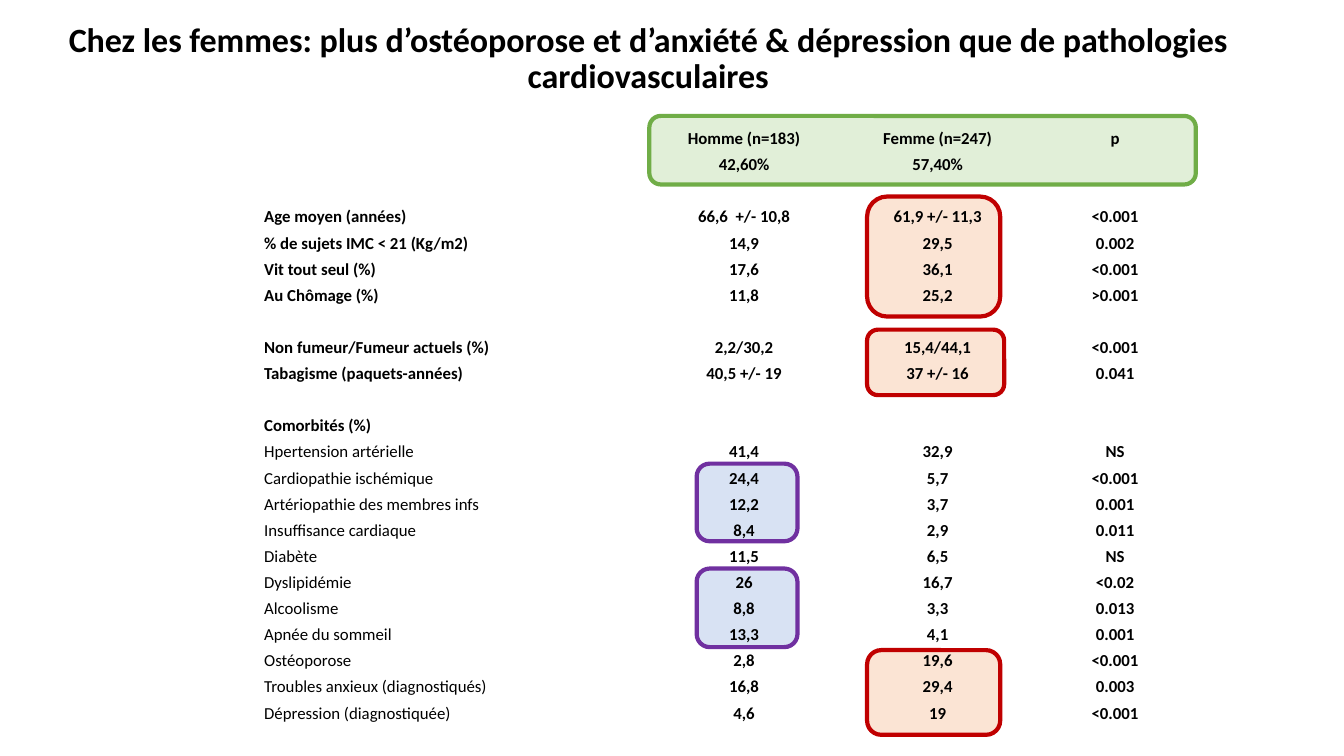
from pptx import Presentation
from pptx.dml.color import RGBColor
from pptx.enum.shapes import MSO_SHAPE
from pptx.enum.text import MSO_ANCHOR, MSO_AUTO_SIZE, PP_ALIGN
from pptx.util import Inches, Pt

TITLE = ("Chez les femmes: plus d’ostéoporose et d’anxiété & dépression "
         "que de pathologies cardiovasculaires")

GAP = ("", "", "", "")
HEAD = [
    ("", "Homme (n=183)", "Femme (n=247)", "p"),
    ("", "42,60%", "57,40%", ""),
    GAP,
    ("Age moyen (années)", "66,6  +/- 10,8", "61,9 +/- 11,3", "<0.001"),
    ("% de sujets IMC < 21 (Kg/m2)", "14,9", "29,5", "0.002"),
    ("Vit tout seul (%)", "17,6", "36,1", "<0.001"),
    ("Au Chômage (%)", "11,8", "25,2", ">0.001"),
    GAP,
    ("Non fumeur/Fumeur actuels (%)", "2,2/30,2", "15,4/44,1", "<0.001"),
    ("Tabagisme (paquets-années)", "40,5 +/- 19", "37 +/- 16", "0.041"),
    GAP,
    ("Comorbités (%)", "", "", ""),
]
ILLS = [
    ("Hpertension artérielle", "41,4", "32,9", "NS"),
    ("Cardiopathie ischémique", "24,4", "5,7", "<0.001"),
    ("Artériopathie des membres infs", "12,2", "3,7", "0.001"),
    ("Insuffisance cardiaque", "8,4", "2,9", "0.011"),
    ("Diabète", "11,5", "6,5", "NS"),
    ("Dyslipidémie", "26", "16,7", "<0.02"),
    ("Alcoolisme", "8,8", "3,3", "0.013"),
    ("Apnée du sommeil", "13,3", "4,1", "0.001"),
    ("Ostéoporose", "2,8", "19,6", "<0.001"),
    ("Troubles anxieux (diagnostiqués)", "16,8", "29,4", "0.003"),
    ("Dépression (diagnostiquée)", "4,6", "19", "<0.001"),
]
WIDTHS = (3.8, 1.92, 1.92, 1.6)
TABLE = (2.62, 1.22, sum(WIDTHS), 5.96)

# Highlight: colour pair, then left, top, width, height
MARKS = [
    ("head", (6.44, 1.15, 5.42, 0.68)),
    ("men", (6.91, 5.64, 1, 0.78)),
    ("men", (6.91, 4.6, 1, 0.77)),
    ("women", (8.6, 3.27, 1.36, 0.65)),
    ("women", (8.6, 6.45, 1.32, 0.84)),
    ("women", (8.6, 1.95, 1.32, 1.19)),
]

THEME = {
    "font": "Calibri", "ink": "000000", "title": 24.3, "body": 12, "line": 3,
    "head": ("E1EFD8", "70AD47"),
    "men": ("D8E2F3", "7030A0"),
    "women": ("FBE4D4", "C00000"),
}
PLAIN = "{2D5ABB26-0587-4C30-8999-92F81FD0307C}"  # table style without grid


def rgb(code):
    return RGBColor.from_string(code)


def style(font, size, bold):
    look = {"name": THEME["font"], "size": Pt(size), "bold": bold}
    for key, value in look.items():
        setattr(font, key, value)
    font.color.rgb = rgb(THEME["ink"])


def add_title(slide):
    title = slide.shapes.title
    place = {"left": 0.52, "top": 0.17, "width": 11.82, "height": 0.84}
    for key, value in place.items():
        setattr(title, key, Inches(value))
    frame = title.text_frame
    frame.text = TITLE
    frame.word_wrap = True
    frame.auto_size = MSO_AUTO_SIZE.NONE
    frame.vertical_anchor = MSO_ANCHOR.MIDDLE
    par = frame.paragraphs[0]
    par.alignment = PP_ALIGN.CENTER
    par.line_spacing = 0.9
    style(par.runs[0].font, THEME["title"], True)


def add_mark(slide, tone, box):
    mark = slide.shapes.add_shape(MSO_SHAPE.ROUNDED_RECTANGLE, *map(Inches, box))
    fill, line = THEME[tone]
    mark.shadow.inherit = False
    mark.fill.solid()
    mark.fill.fore_color.rgb = rgb(fill)
    mark.line.color.rgb = rgb(line)
    mark.line.width = Pt(THEME["line"])


def fill_cell(cell, text, bold, align):
    cell.fill.background()
    cell.vertical_anchor = MSO_ANCHOR.BOTTOM
    for side in ("left", "right", "top", "bottom"):
        setattr(cell, "margin_" + side, 0)
    par = cell.text_frame.paragraphs[0]
    par.alignment = align
    if text:
        run = par.add_run()
        run.text = text
        style(run.font, THEME["body"], bold)
    else:  # keeps an empty row from growing to the default type size
        par._p.get_or_add_endParaRPr().set("sz", str(THEME["body"] * 100))


def add_grid(slide):
    rows = HEAD + ILLS
    frame = slide.shapes.add_table(len(rows), len(WIDTHS), *map(Inches, TABLE))
    grid = frame.table
    grid.first_row = grid.horz_banding = False
    grid._tbl.tblPr[0].text = PLAIN
    for col, width in zip(grid.columns, WIDTHS):
        col.width = Inches(width)
    for r, row in enumerate(rows):
        for c, text in enumerate(row):
            bold = c > 0 or r < len(HEAD)
            align = PP_ALIGN.CENTER if c else PP_ALIGN.LEFT
            fill_cell(grid.cell(r, c), text, bold, align)


def main():
    deck = Presentation()
    deck.slide_width, deck.slide_height = Inches(13.33), Inches(7.5)
    slide = deck.slides.add_slide(deck.slide_layouts[5])
    add_title(slide)
    for tone, box in MARKS:
        add_mark(slide, tone, box)
    add_grid(slide)
    deck.save("out.pptx")


if __name__ == "__main__":
    main()
